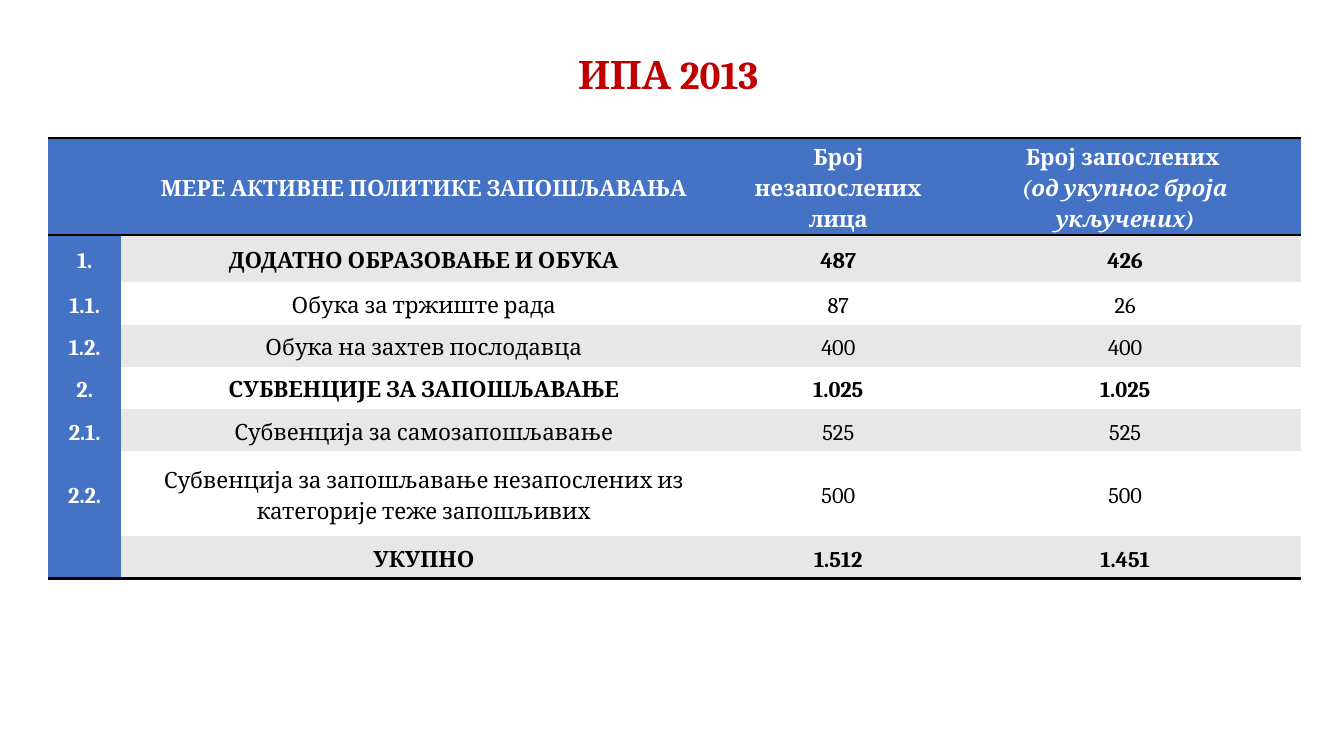
import pptx
import pptx.util
import pptx.dml.color
import pptx.enum.text
import pptx.oxml.ns
from lxml import etree

Inches, Pt = pptx.util.Inches, pptx.util.Pt
MIDDLE = pptx.enum.text.MSO_ANCHOR.MIDDLE
CENTER = pptx.enum.text.PP_ALIGN.CENTER

SLIDE_WIDTH, SLIDE_HEIGHT = 13.33, 7.5
FONT = "Cambria"
COLORS = {
    "title": "C00000",
    "accent": "4472C4",
    "band": "E7E7E7",
    "plain": "FFFFFF",
    "light_text": "FFFFFF",
    "dark_text": "000000",
    "rule": "000000",
}
NO_STYLE_NO_GRID = "{2D5ABB26-0587-4C30-8999-92F81FD0307C}"

COLUMN_WIDTHS = [0.72, 6.01, 2.21, 3.48]
UNIT_HEIGHT = 0.42
ROW_UNITS = [2, 1.12, 1, 1, 1, 1, 2, 1]

# A line break inside a cell starts a new paragraph
ROWS = [
    ("", "МЕРЕ АКТИВНЕ ПОЛИТИКЕ ЗАПОШЉАВАЊА", "Број незапослених лица",
     "Број запослених \n(од укупног броја укључених)"),
    ("1.", "ДОДАТНО ОБРАЗОВАЊЕ И ОБУКА", "487", "426"),
    ("1.1.", "Обука за тржиште рада", "87", "26"),
    ("1.2.", "Обука на захтев послодавца", "400", "400"),
    ("2.", "СУБВЕНЦИЈЕ ЗА ЗАПОШЉАВАЊЕ", "1.025", "1.025"),
    ("2.1.", "Субвенција за самозапошљавање", "525", "525"),
    ("2.2.", "Субвенција за запошљавање незапослених из категорије теже запошљивих",
     "500", "500"),
    ("", "УКУПНО", "1.512", "1.451"),
]


def rgb(name):
    return pptx.dml.color.RGBColor.from_string(COLORS[name])


def set_attributes(target, values):
    for name, value in values.items():
        setattr(target, name, value)


def write_paragraph(paragraph, text, color, line_spacing, font_format):
    set_attributes(paragraph, {"alignment": CENTER, "line_spacing": line_spacing})
    run = paragraph.add_run()
    run.text = text
    set_attributes(run.font, {"name": FONT, **font_format})
    run.font.color.rgb = rgb(color)


def add_title(slide, text):
    box = slide.shapes.add_textbox(Inches(0.92), Inches(0.4), Inches(11.5), Inches(0.72))
    frame = box.text_frame
    set_attributes(frame, {"word_wrap": True, "vertical_anchor": MIDDLE})
    write_paragraph(frame.paragraphs[0], text, "title", 0.9, {"size": Pt(28), "bold": True})


def add_border(cell, side):
    line = etree.SubElement(cell._tc.get_or_add_tcPr(), pptx.oxml.ns.qn(f"a:ln{side}"),
                            w=str(Pt(2)), cap="flat", cmpd="sng")
    fill = etree.SubElement(line, pptx.oxml.ns.qn("a:solidFill"))
    etree.SubElement(fill, pptx.oxml.ns.qn("a:srgbClr"), val=COLORS["rule"])


def format_cell(cell, row, column):
    # Rules above and below the header, and below the total
    if row == 0:
        add_border(cell, "T")
    if row in (0, len(ROWS) - 1):
        add_border(cell, "B")
    accent = row == 0 or column == 0
    cell.fill.solid()
    cell.fill.fore_color.rgb = rgb("accent" if accent else "band" if row % 2 else "plain")
    set_attributes(cell, {
        "margin_left": Inches(0.07), "margin_right": Inches(0.07),
        "margin_top": 0, "margin_bottom": 0, "vertical_anchor": MIDDLE,
    })

    # Only the numbered sub-measures are set in regular weight
    sub_measure = ROWS[row][0].count(".") == 2
    text = ROWS[row][column]
    frame = cell.text_frame
    for index, line in enumerate(text.split("\n") if text else []):
        paragraph = frame.add_paragraph() if index else frame.paragraphs[0]
        write_paragraph(paragraph, line, "light_text" if accent else "dark_text", 1.2, {
            "size": Pt(16), "bold": accent or not sub_measure, "italic": index > 0,
        })


def add_measures_table(slide):
    frame = slide.shapes.add_table(
        len(ROWS), len(COLUMN_WIDTHS), Inches(0.48), Inches(1.37),
        Inches(sum(COLUMN_WIDTHS)), Inches(UNIT_HEIGHT * sum(ROW_UNITS)))
    table = frame.table
    table._tbl.tblPr.find(pptx.oxml.ns.qn("a:tableStyleId")).text = NO_STYLE_NO_GRID
    for column, width in zip(table.columns, COLUMN_WIDTHS):
        column.width = Inches(width)
    for row, units in zip(table.rows, ROW_UNITS):
        row.height = Inches(UNIT_HEIGHT * units)
    for row in range(len(ROWS)):
        for column in range(len(COLUMN_WIDTHS)):
            format_cell(table.cell(row, column), row, column)


def main():
    presentation = pptx.Presentation()
    set_attributes(presentation, {
        "slide_width": Inches(SLIDE_WIDTH), "slide_height": Inches(SLIDE_HEIGHT)})
    slide = presentation.slides.add_slide(presentation.slide_layouts[6])
    add_title(slide, "ИПА 2013 ")
    add_measures_table(slide)
    presentation.save("out.pptx")


if __name__ == "__main__":
    main()
